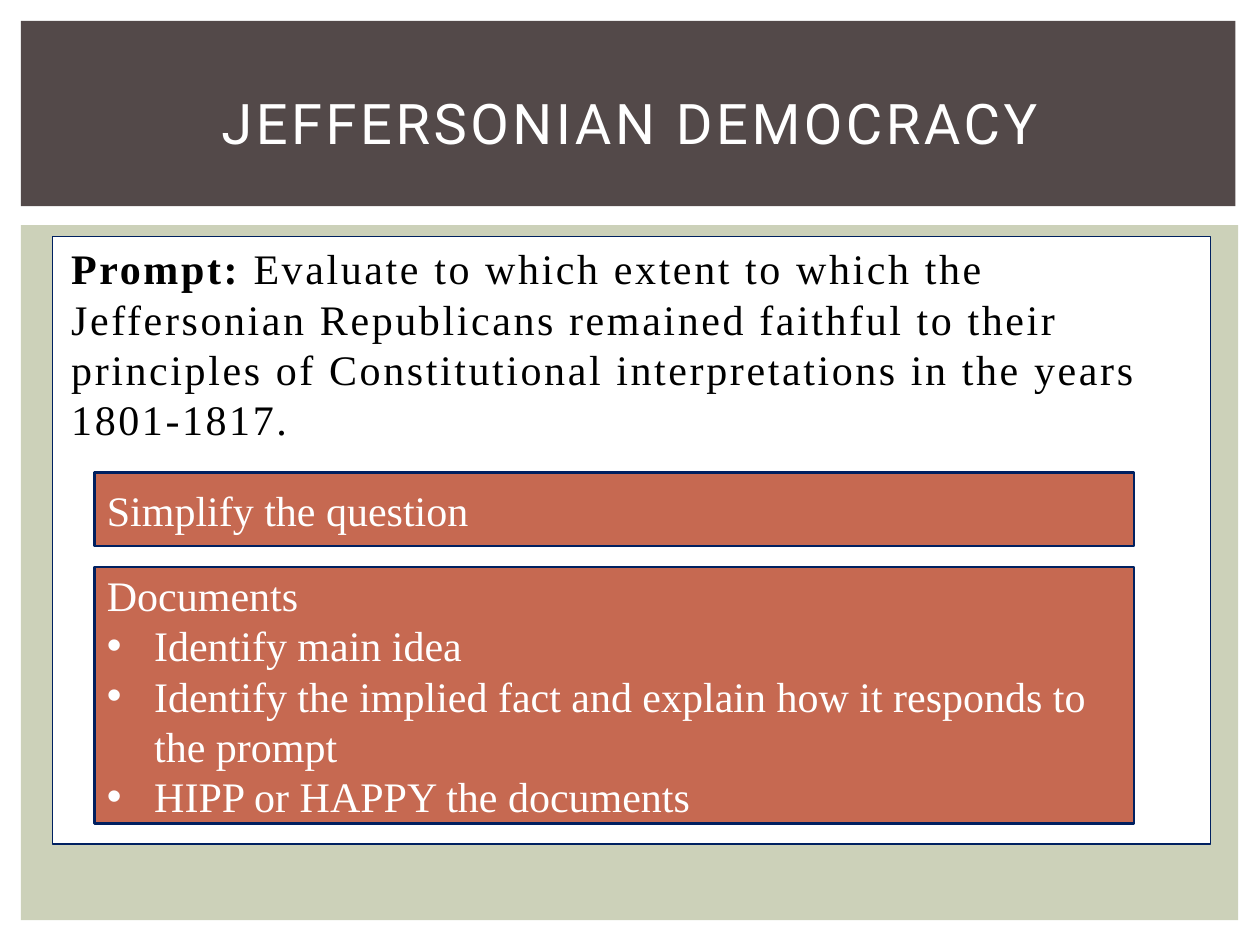
"""Build the Jeffersonian Democracy prompt slide."""
import lxml.etree
import pptx
import pptx.dml.color
import pptx.enum.shapes
import pptx.enum.text
import pptx.oxml.ns
import pptx.util

Pt = pptx.util.Pt
ANCHOR = pptx.enum.text.MSO_ANCHOR
SERIF = {"name": "Times New Roman", "size": Pt(24), "bold": False}


def color(hex_string):
    return pptx.dml.color.RGBColor.from_string(hex_string)


def add_span(para, text, font_values, hex_color, spacing=0):
    span = para.add_run()
    span.text = text
    for name, value in font_values.items():
        setattr(span.font, name, value)
    span.font.color.rgb = color(hex_color)
    if spacing:
        span.font._element.set("spc", str(spacing))


deck = pptx.Presentation()
deck.slide_width, deck.slide_height = Pt(720), Pt(540)
page = deck.slides.add_slide(deck.slide_layouts[5])

rectangles = {
    "backdrop": (12, 128.7, 695.5, 397.2, "CCD1B9", 0),
    "title band": (12, 12, 694, 105.9, "534949", 0),
    "prompt": (30, 135.2, 661.8, 347.2, "FFFFFF", 0.75),
    "simplify": (54, 270, 594, 42, "C66951", 1.5),
    "documents": (54, 324, 594, 146.6, "C66951", 1.5),
}
boxes = {}
for name, (left, top, width, height, fill, line_width) in rectangles.items():
    box = page.shapes.add_shape(
        pptx.enum.shapes.MSO_SHAPE.RECTANGLE, Pt(left), Pt(top), Pt(width), Pt(height))
    box.shadow.inherit = False
    box.fill.solid()
    box.fill.fore_color.rgb = color(fill)
    if line_width:
        box.line.color.rgb = color("002060")
        box.line.width = Pt(line_width)
    else:
        box.line.fill.background()
    boxes[name] = box

title = page.shapes.title
title_place = {"left": Pt(30), "top": Pt(28.1), "width": Pt(660), "height": Pt(82.8)}
for name, value in title_place.items():
    setattr(title, name, value)
title.text_frame.vertical_anchor = ANCHOR.MIDDLE
para = title.text_frame.paragraphs[0]
para.alignment = pptx.enum.text.PP_ALIGN.CENTER
add_span(para, "JEFFERSONIAN DEMOCRACY", {"name": "Roboto", "size": Pt(32)}, "FFFFFF", 200)
title.element.getparent().append(title.element)

frame = boxes["prompt"].text_frame
frame.word_wrap = True
frame.vertical_anchor = ANCHOR.TOP
para = frame.paragraphs[0]
para.alignment = pptx.enum.text.PP_ALIGN.LEFT
para.space_before = Pt(4.8)
para._p.get_or_add_pPr().set("marL", str(Pt(3.6)))
add_span(para, "Prompt:", SERIF | {"bold": True}, "000000", 150)
add_span(
    para,
    " Evaluate to which extent to which the Jeffersonian Republicans remained faithful "
    "to their principles of Constitutional interpretations in the years 1801-1817.",
    SERIF, "000000", 150)

steps = {
    "simplify": ["Simplify the question"],
    "documents": [
        "Documents",
        "Identify main idea",
        "Identify the implied fact and explain how it responds to the prompt",
        "HIPP or HAPPY the documents",
    ],
}
for name, lines in steps.items():
    frame = boxes[name].text_frame
    frame.word_wrap = True
    frame.vertical_anchor = ANCHOR.MIDDLE
    for index, text in enumerate(lines):
        para = frame.add_paragraph() if index else frame.paragraphs[0]
        para.alignment = pptx.enum.text.PP_ALIGN.LEFT
        add_span(para, text, SERIF, "FFFFFF")
        if index:
            properties = para._p.get_or_add_pPr()
            properties.set("marL", str(Pt(27)))
            properties.set("indent", str(-Pt(27)))
            font = lxml.etree.SubElement(properties, pptx.oxml.ns.qn("a:buFont"))
            font.set("typeface", "Arial")
            bullet = lxml.etree.SubElement(properties, pptx.oxml.ns.qn("a:buChar"))
            bullet.set("char", "•")

deck.save("out.pptx")
